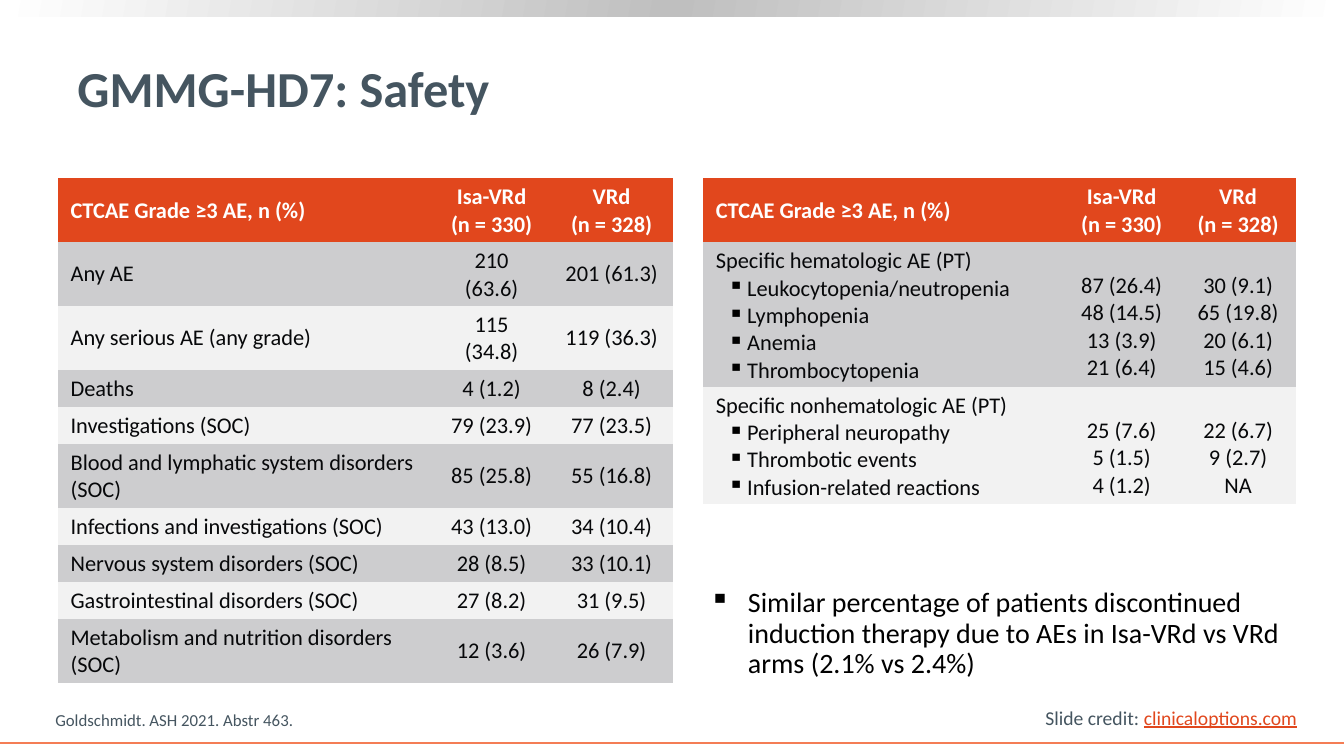
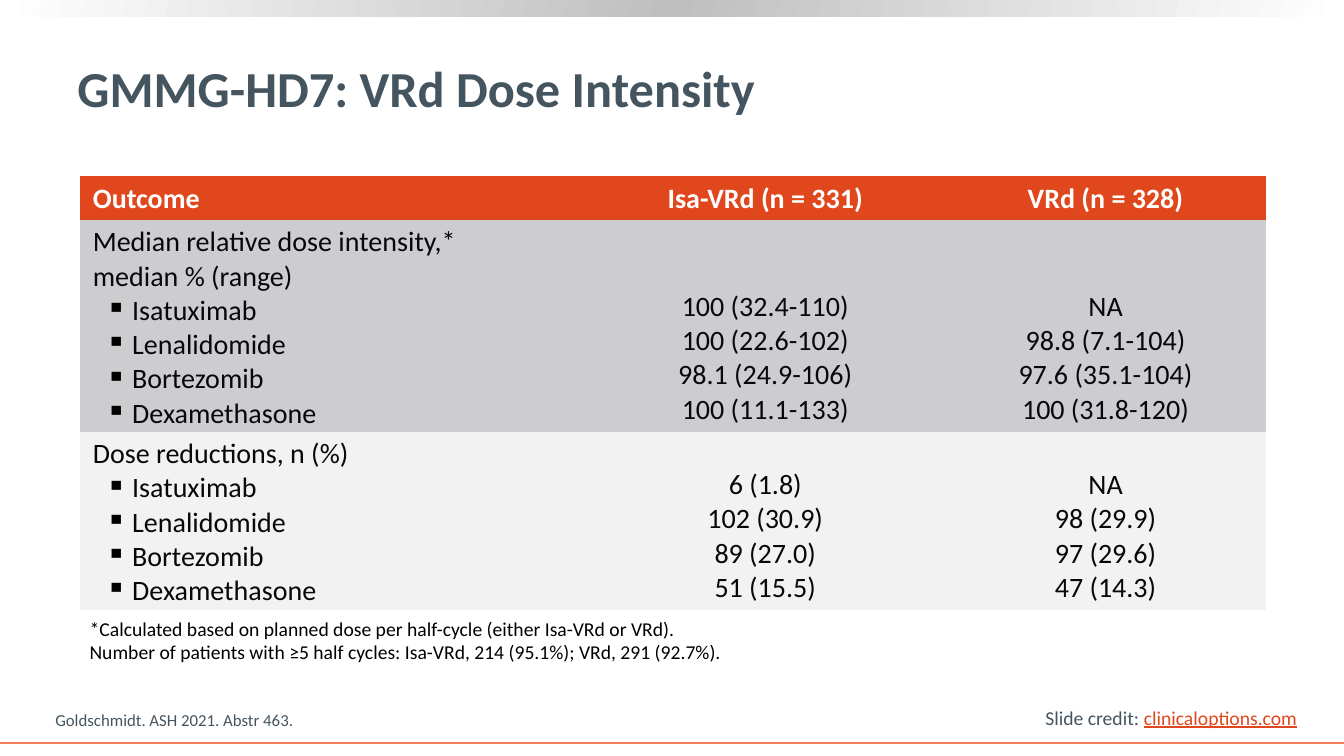
from copy import deepcopy
from dataclasses import dataclass, replace

from lxml.etree import SubElement
from pptx import Presentation
from pptx.dml.color import RGBColor as Color
from pptx.enum.shapes import MSO_CONNECTOR as Connector, MSO_SHAPE as Shape
from pptx.enum.text import MSO_ANCHOR as Anchor, PP_ALIGN as Align
from pptx.oxml.ns import qn
from pptx.util import Inches, Pt


@dataclass(frozen=True)
class Type:
    size: int
    color: str
    bold: bool = False
    underline: bool = False


@dataclass(frozen=True)
class Theme:
    font: str = "Calibri"
    accent: str = "E1471D"
    rule: str = "F47D55"
    band: tuple = ("FFFFFF", "BFBFBF", "FFFFFF")
    stripes: tuple = ("CDCDCF", "F2F2F2")
    bullet: str = "000000"
    title: Type = Type(36, "455560", bold=True)
    body: Type = Type(20, "000000")
    note: Type = Type(14, "000000")
    credit: Type = Type(14, "455560")
    link: Type = Type(14, "E1471D", underline=True)
    citation: Type = Type(12, "455560")
    head: Type = Type(16, "FFFFFF", bold=True)
    cell: Type = Type(16, "07080A")
    line_height: float = 1.2
    no_grid: str = "{2D5ABB26-0587-4C30-8999-92F81FD0307C}"


class SlideKit:
    def __init__(self, theme):
        self.theme = theme
        self.deck = Presentation()
        self.deck.slide_width = Inches(13.33)
        self.deck.slide_height = Inches(7.5)
        self.slide = None

    def across(self, percent):
        return round(self.deck.slide_width * percent / 100)

    def down(self, percent):
        return round(self.deck.slide_height * percent / 100)

    def area(self, left, top, width, height):
        return self.across(left), self.down(top), self.across(width), self.down(height)

    def add_runs(self, para, text, style):
        for index, line in enumerate(text.split("\n")):
            if index:
                para.add_line_break()
            span = para.add_run()
            span.text = line
            font = span.font
            font.name = self.theme.font
            font.size = Pt(style.size)
            font.bold = style.bold
            font.underline = style.underline
            font.color.rgb = Color.from_string(style.color)

    def add_bullet(self, para, left, hanging):
        props = para._p.get_or_add_pPr()
        props.set("marL", str(self.across(left)))
        props.set("indent", str(-self.across(hanging)))
        color = SubElement(props, qn("a:buClr"))
        SubElement(color, qn("a:srgbClr")).set("val", self.theme.bullet)
        SubElement(props, qn("a:buChar")).set("char", "▪")

    def text(self, area, *spans, anchor=Anchor.TOP, wrap=True):
        box = self.slide.shapes.add_textbox(*self.area(*area))
        frame = box.text_frame
        frame.word_wrap = wrap
        frame.vertical_anchor = anchor
        para = frame.paragraphs[0]
        for words, style in spans:
            self.add_runs(para, words, style)
        return para

    def bullet_text(self, area, words):
        para = self.text(area, (words, self.theme.body))
        para.line_spacing = 0.9
        self.add_bullet(para, 2.85, 2.85)

    def band(self):
        band = self.slide.shapes.add_shape(Shape.RECTANGLE, *self.area(0, 0, 100, 2.13))
        band.shadow.inherit = False
        band.line.fill.background()
        band.fill.gradient()
        band.fill.gradient_angle = 170
        stops = band.element.spPr.find(".//" + qn("a:gsLst"))
        stops.append(deepcopy(stops[0]))
        for index, (stop, color) in enumerate(zip(band.fill.gradient_stops, self.theme.band)):
            stop.position = index / 2
            stop.color.rgb = Color.from_string(color)

    def rule(self):
        height = self.down(98.27)
        rule = self.slide.shapes.add_connector(
            Connector.STRAIGHT, 0, height, self.deck.slide_width, height)
        rule.line.color.rgb = Color.from_string(self.theme.rule)
        rule.line.width = Pt(1.5)
        SubElement(rule.element.spPr, qn("a:effectLst"))

    def page(self, title):
        theme = self.theme
        self.slide = self.deck.slides.add_slide(self.deck.slide_layouts[6])
        self.rule()
        self.band()
        self.text((5.03, 3.47, 89.2, 16.13), (title, theme.title), anchor=Anchor.MIDDLE)
        self.text((77.04, 92.67, 20.4, 4.53), ("Slide credit: ", theme.credit),
                  ("clinicaloptions.com", theme.link), wrap=False)
        self.text((3.38, 93.2, 64.44, 4), ("Goldschmidt. ASH 2021. Abstr 463.", theme.citation),
                  anchor=Anchor.BOTTOM)

    def fill_cell(self, cell, content, style, fill, is_label, indent):
        paragraphs = [content] if isinstance(content, str) else content
        cell.fill.solid()
        cell.fill.fore_color.rgb = Color.from_string(fill)
        cell.margin_left = cell.margin_right = Inches(0.13)
        cell.margin_top = cell.margin_bottom = Inches(0.05)
        cell.vertical_anchor = Anchor.MIDDLE if len(paragraphs) == 1 else Anchor.BOTTOM
        frame = cell.text_frame
        for index, words in enumerate(paragraphs):
            para = frame.add_paragraph() if index else frame.paragraphs[0]
            para.alignment = Align.LEFT if is_label else Align.CENTER
            if is_label and index:
                self.add_bullet(para, *indent)
            self.add_runs(para, words, style)

    def table(self, left, top, columns, rows, size=16, indent=(2.33, 1.43)):
        theme = self.theme
        heights = [Inches(0.1) + Pt(lines * size * theme.line_height) for lines, *_ in rows]
        holder = self.slide.shapes.add_table(
            len(rows), len(columns), self.across(left), self.down(top),
            self.across(sum(columns)), sum(heights))
        holder.element.find(".//" + qn("a:tableStyleId")).text = theme.no_grid
        table = holder.table
        table.horz_banding = False
        for column, width in zip(table.columns, columns):
            column.width = self.across(width)
        for number, (_, *contents) in enumerate(rows):
            table.rows[number].height = heights[number]
            style = replace(theme.cell if number else theme.head, size=size)
            fill = theme.stripes[(number - 1) % 2] if number else theme.accent
            for position, content in enumerate(contents):
                self.fill_cell(table.cell(number, position), content, style, fill,
                               position == 0, indent)


def safety_page(kit):
    kit.page("GMMG-HD7: Safety")
    heading = (2, "CTCAE Grade ≥3 AE, n (%)", "Isa-VRd\n(n = 330)", "VRd\n(n = 328)")
    kit.table(4.28, 23.6, (27.91, 8.78, 9.08), [
        heading,
        (2, "Any AE", "210 (63.6)", "201 (61.3)"),
        (2, "Any serious AE (any grade)", "115 (34.8)", "119 (36.3)"),
        (1, "Deaths", "4 (1.2)", "8 (2.4)"),
        (1, "Investigations (SOC)", "79 (23.9)", "77 (23.5)"),
        (2, "Blood and lymphatic system disorders (SOC)", "85 (25.8)", "55 (16.8)"),
        (1, "Infections and investigations (SOC)", "43 (13.0)", "34 (10.4)"),
        (1, "Nervous system disorders (SOC)", "28 (8.5)", "33 (10.1)"),
        (1, "Gastrointestinal disorders (SOC)", "27 (8.2)", "31 (9.5)"),
        (2, "Metabolism and nutrition disorders (SOC)", "12 (3.6)", "26 (7.9)"),
    ])
    kit.table(52.29, 23.6, (26.78, 8.78, 8.55), [
        heading,
        (5, ["Specific hematologic AE (PT)", "Leukocytopenia/neutropenia", "Lymphopenia",
             "Anemia", "Thrombocytopenia"],
         ["87 (26.4)", "48 (14.5)", "13 (3.9)", "21 (6.4)"],
         ["30 (9.1)", "65 (19.8)", "20 (6.1)", "15 (4.6)"]),
        (4, ["Specific nonhematologic AE (PT)", "Peripheral neuropathy", "Thrombotic events",
             "Infusion-related reactions"],
         ["25 (7.6)", "5 (1.5)", "4 (1.2)"],
         ["22 (6.7)", "9 (2.7)", "NA"]),
    ])
    kit.bullet_text((52.06, 77.2, 46.66, 16.13),
                    "Similar percentage of patients discontinued induction therapy "
                    "due to AEs in Isa-VRd vs VRd arms (2.1% vs 2.4%)")


def dose_page(kit):
    kit.page("GMMG-HD7: VRd Dose Intensity")
    drugs = ["Isatuximab", "Lenalidomide", "Bortezomib", "Dexamethasone"]
    kit.table(5.93, 23.33, (37.66, 26.71, 23.93), [
        (1, "Outcome", "Isa-VRd (n = 331)", "VRd (n = 328)"),
        (6, ["Median relative dose intensity,*\nmedian % (range)", *drugs],
         ["100 (32.4-110)", "100 (22.6-102)", "98.1 (24.9-106)", "100 (11.1-133)"],
         ["NA", "98.8 (7.1-104)", "97.6 (35.1-104)", "100 (31.8-120)"]),
        (5, ["Dose reductions, n (%)", *drugs],
         ["6 (1.8)", "102 (30.9)", "89 (27.0)", "51 (15.5)"],
         ["NA", "98 (29.9)", "97 (29.6)", "47 (14.3)"]),
    ], size=20, indent=(2.93, 1.95))
    kit.text((5.93, 80.93, 48.61, 7.6),
             ("*Calculated based on planned dose per half-cycle (either Isa-VRd or VRd).\n"
              "Number of patients with ≥5 half cycles: Isa-VRd, 214 (95.1%); VRd, 291 (92.7%).",
              kit.theme.note))


def main():
    kit = SlideKit(Theme())
    safety_page(kit)
    dose_page(kit)
    kit.deck.save("out.pptx")


if __name__ == "__main__":
    main()
